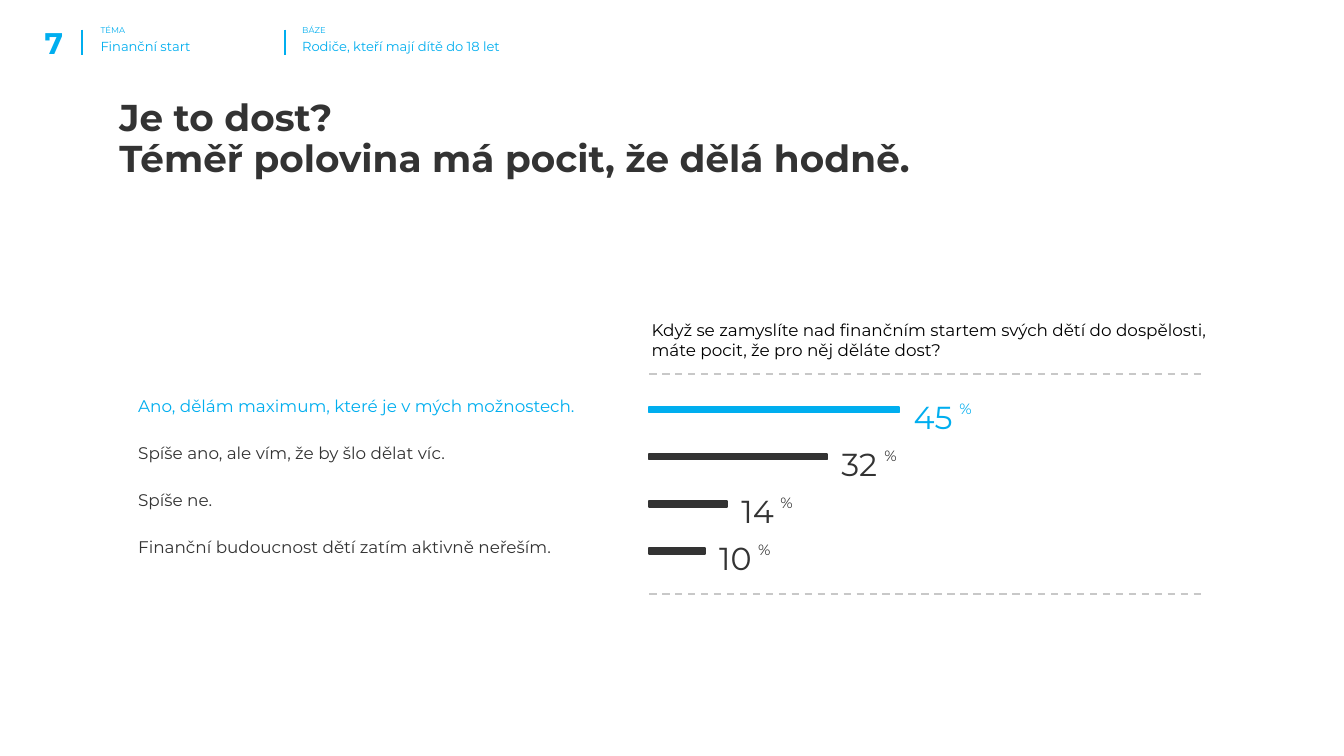
"""Build the survey slide on whether parents feel they do enough."""
from pptx import Presentation
from pptx.dml.color import RGBColor
from pptx.enum.dml import MSO_LINE
from pptx.enum.shapes import MSO_CONNECTOR, MSO_SHAPE
from pptx.enum.text import MSO_ANCHOR, PP_ALIGN
from pptx.oxml.ns import qn
from pptx.util import Inches, Pt
from lxml.etree import SubElement

COLORS = {"blue": "00AEEF", "dark": "333333", "black": "000000", "gray": "C8C8C8"}


def add_text(x, y, w, h, lines, size, color, bold=False, top=0.1):
    tf = s.shapes.add_textbox(Inches(x), Inches(y), Inches(w), Inches(h)).text_frame
    tf.word_wrap = True
    tf.margin_left = tf.margin_right = tf.margin_bottom = Inches(0.1)
    tf.margin_top = Inches(top)
    p = tf.paragraphs[0]
    for i, line in enumerate(lines):
        if i:
            p.add_line_break()
        r = p.add_run()
        r.text = line
        r.font.name = "Montserrat"
        r.font.size = Pt(size)
        r.font.bold = bold
        r.font.color.rgb = RGBColor.from_string(COLORS[color])
    return tf


def add_line(x1, y1, x2, y2, color, width):
    line = s.shapes.add_connector(
        MSO_CONNECTOR.STRAIGHT, Inches(x1), Inches(y1), Inches(x2), Inches(y2))
    line.line.color.rgb = RGBColor.from_string(COLORS[color])
    line.line.width = Pt(width)
    SubElement(line._element.spPr, qn("a:effectLst"))
    return line


prs = Presentation()
prs.slide_width = Inches(10)
prs.slide_height = Inches(10 * 9 / 16)
s = prs.slides.add_slide(prs.slide_layouts[6])

tf = add_text(0, 0, 0.47, 0.45, ["7"], 16, "blue", True)
tf.margin_right = tf.margin_bottom = 0
tf.vertical_anchor = MSO_ANCHOR.BOTTOM
tf.paragraphs[0].alignment = PP_ALIGN.RIGHT

headers = [
    (0.65, 0.61, 0.75, "TÉMA", "Finanční start", 1.07),
    (2.15, 2.12, 0.7, "BÁZE", "Rodiče, kteří mají dítě do 18 let", 3.21),
]
for x, line_x, line_width, caption, value, width in headers:
    add_line(line_x, 0.22, line_x, 0.41, "blue", line_width)
    add_text(x, 0.12, 0.63, 0.42, [caption], 4.5, "blue", top=0.16)
    add_text(x, 0.21, width, 0.29, [value], 7, "blue", top=0.14)

tf = add_text(0.79, 0.64, 7.73, 0.5,
              ["Je to dost?", "Téměř polovina má pocit, že dělá hodně."], 20, "dark", True)
tf.paragraphs[0].line_spacing = 0.9

add_text(4.75, 2.28, 4.35, 0.35,
         ["Když se zamyslíte nad finančním startem svých dětí do dospělosti, "
          "máte pocit, že pro něj děláte dost?"], 9, "black")

for y in (2.78, 4.42):
    add_line(4.83, y, 8.97, y, "gray", 1).line.dash_style = MSO_LINE.DASH

answers = [
    ("Ano, dělám maximum, které je v mých možnostech.", 3.85, 45, "blue", 0.34),
    ("Spíše ano, ale vím, že by šlo dělat víc.", 2.85, 32, "dark", 0.32),
    ("Spíše ne.", 0.96, 14, "dark", 0.29),
    ("Finanční budoucnost dětí zatím aktivně neřeším.", 3.64, 10, "dark", 0.29),
]
bar_left, row_top, row_step = 4.83, 2.86, 0.35
for i, (answer, width, percent, color, sign_offset) in enumerate(answers):
    y = row_top + i * row_step
    bar_width = percent * 1.86 / 45
    number_left = bar_left + bar_width + 0.01
    add_text(0.93, y, width, 0.33, [answer], 9, color, top=0.12)
    sp = s.shapes.add_shape(MSO_SHAPE.RECTANGLE, Inches(bar_left), Inches(y + 0.17),
                            Inches(bar_width), Inches(0.04))
    sp.shadow.inherit = False
    sp.fill.solid()
    sp.fill.fore_color.rgb = RGBColor.from_string(COLORS[color])
    sp.line.color.rgb = RGBColor.from_string(COLORS[color])
    sp.line.width = Pt(1)
    add_text(number_left, y, 0.66, 0.38, [str(percent)], 17, color)
    add_text(number_left + sign_offset, y + 0.03, 0.46, 0.29, ["%"], 8, color, top=0.13)

prs.save("out.pptx")
